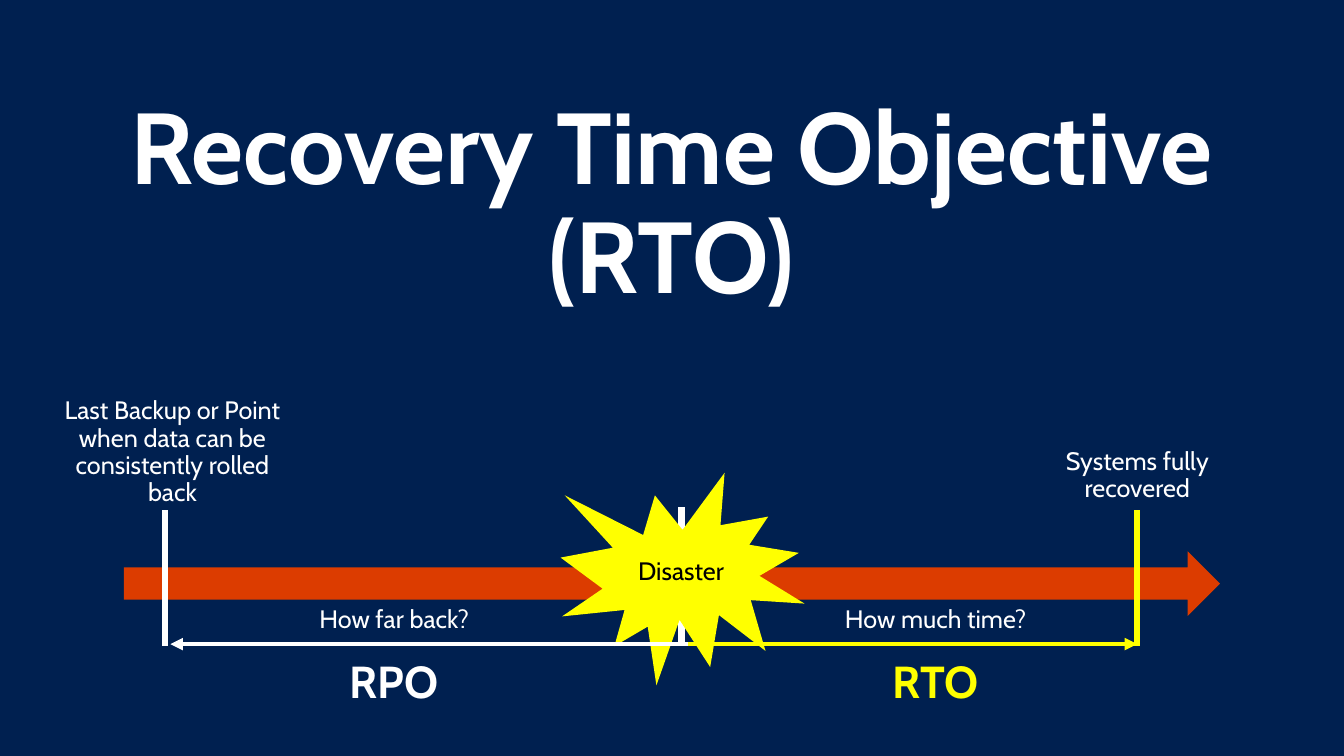
from lxml.etree import SubElement
from pptx import Presentation
from pptx.dml.color import RGBColor
from pptx.enum.shapes import MSO_CONNECTOR, MSO_SHAPE
from pptx.enum.text import MSO_ANCHOR, PP_ALIGN
from pptx.oxml.ns import qn
from pptx.util import Inches, Pt

NAVY = RGBColor(0x00, 0x20, 0x50)
WHITE = RGBColor(0xFF, 0xFF, 0xFF)
ORANGE = RGBColor(0xDC, 0x3C, 0x00)
YELLOW = RGBColor(0xFF, 0xFF, 0x00)
BLACK = RGBColor(0x00, 0x00, 0x00)
FONT = "Cabin"

# Content: title, event and the labels around the timeline
TITLE = "Recovery Time Objective (RTO)"
EVENT = "Disaster"
LABEL_WIDTH = 2.58
LABELS = [  # text, left, top, height, size, colour, bold
    ("Last Backup or Point when data can be consistently rolled back",
     0.42, 3.79, 1.41, 18, WHITE, False),
    ("Systems fully recovered", 9.99, 4.29, 0.87, 18, WHITE, False),
]
SPANS = [  # question, objective, left, objective colour
    ("How far back?", "RPO", 2.62, WHITE),
    ("How much time?", "RTO", 7.99, YELLOW),
]
for question, objective, left, colour in SPANS:
    LABELS += [(question, left, 5.88, 0.6, 18, WHITE, False),
               (objective, left, 6.39, 0.81, 32, colour, True)]

# Timeline positions
BACKUP_X, DISASTER_X, RECOVERED_X = 1.64, 6.76, 11.28
SPAN_START_X, SPAN_Y = 6.82, 6.39
MARKER_TOP, MARKER_BOTTOM = 5.06, 6.41

deck = Presentation()
deck.slide_width, deck.slide_height = Inches(13.33), Inches(7.5)
page = deck.slides.add_slide(deck.slide_layouts[6])
page.background.fill.solid()
page.background.fill.fore_color.rgb = NAVY


def write(shape, text, size, colour, bold=False, margins=(0.2, 0.16), after=0):
    frame = shape.text_frame
    frame.word_wrap = True
    frame.margin_left = frame.margin_right = Inches(margins[0])
    frame.margin_top = frame.margin_bottom = Inches(margins[1])
    para = frame.paragraphs[0]
    para.text = text
    para.alignment = PP_ALIGN.CENTER
    para.line_spacing = 0.9
    para.space_after = Pt(after)
    para.font.name, para.font.size, para.font.bold = FONT, Pt(size), bold
    para.font.color.rgb = colour
    return frame


def add_text(left, top, width, height, *text, **options):
    box = page.shapes.add_textbox(Inches(left), Inches(top), Inches(width), Inches(height))
    write(box, *text, **options)


def add_block(kind, left, top, width, height, colour):
    block = page.shapes.add_shape(kind, Inches(left), Inches(top), Inches(width), Inches(height))
    block.shadow.inherit = False
    block.fill.solid()
    block.fill.fore_color.rgb = colour
    block.line.fill.background()
    return block


def add_line(x1, y1, x2, y2, colour, weight, arrow=False):
    line = page.shapes.add_connector(
        MSO_CONNECTOR.STRAIGHT, Inches(x1), Inches(y1), Inches(x2), Inches(y2))
    line.line.color.rgb = colour
    line.line.width = Pt(weight)
    if arrow:
        SubElement(line.line._get_or_add_ln(), qn("a:tailEnd"), type="triangle")
    SubElement(line._element.spPr, qn("a:effectLst"))


# Title
add_text(0.29, 0.87, 12.74, 2.38, TITLE, 72, WHITE, True, margins=(0.16, 0.1))

# Timeline with its markers and the disaster burst
add_line(DISASTER_X, 5.03, DISASTER_X, SPAN_Y, WHITE, 4.5)
add_block(MSO_SHAPE.RIGHT_ARROW, 1.23, 5.47, 10.87, 0.64, ORANGE)
add_line(BACKUP_X, MARKER_TOP, BACKUP_X, MARKER_BOTTOM, WHITE, 4.5)
burst = add_block(MSO_SHAPE.EXPLOSION1, 5.56, 4.69, 2.42, 2.11, YELLOW)
write(burst, EVENT, 18, BLACK).vertical_anchor = MSO_ANCHOR.MIDDLE
add_line(RECOVERED_X, MARKER_TOP, RECOVERED_X, MARKER_BOTTOM, YELLOW, 4.5)

# Spans measured from the disaster
add_line(SPAN_START_X, SPAN_Y, BACKUP_X + 0.05, SPAN_Y, WHITE, 3, arrow=True)
add_line(SPAN_START_X, SPAN_Y, RECOVERED_X, SPAN_Y, YELLOW, 3, arrow=True)

# Labels
for text, left, top, height, size, colour, bold in LABELS:
    add_text(left, top, LABEL_WIDTH, height, text, size, colour, bold, after=6)

deck.save("out.pptx")
